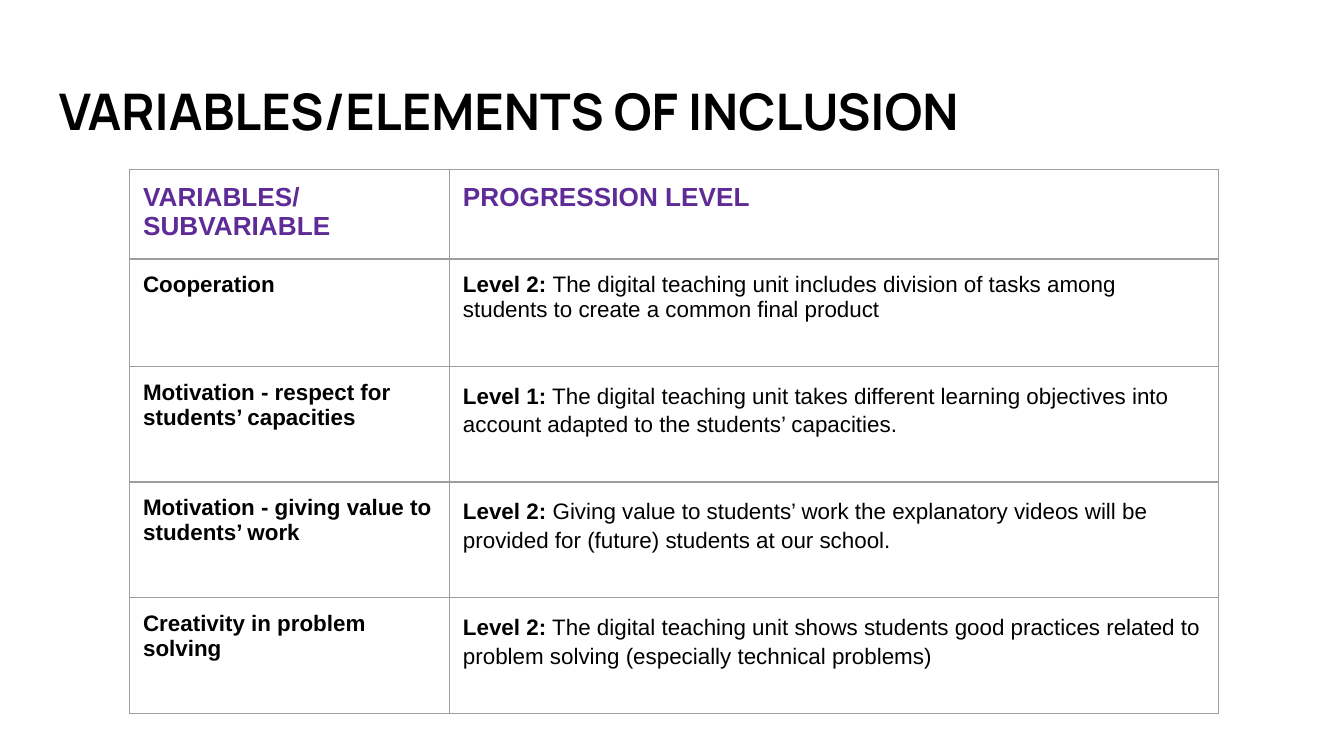
from lxml import etree
from pptx import Presentation
from pptx.dml.color import RGBColor
from pptx.enum.text import MSO_ANCHOR
from pptx.oxml.ns import qn
from pptx.util import Pt

PX = 4572
MID = MSO_ANCHOR.MIDDLE
TOP = MSO_ANCHOR.TOP
HUES = {"ink": "000000", "head": "5E2B97", "rule": "9E9E9E"}
PAD = 20
COLS = [476, 1144]
ROWS = [133, 160, 172, 172, 172]
HEADS = [["VARIABLES/", "SUBVARIABLE"], ["PROGRESSION LEVEL"]]
ITEMS = [
    ("Cooperation", "Level 2: ",
     "The digital teaching unit includes division of tasks among students to create a common final product", 1.0),
    ("Motivation - respect for students’ capacities", "Level 1:",
     " The digital teaching unit takes different learning objectives into account adapted to the students’ capacities.", 1.15),
    ("Motivation - giving value to students’ work", "Level 2:",
     " Giving value to students’ work the explanatory videos will be provided for (future) students at our school.", 1.15),
    ("Creativity in problem solving", "Level 2:",
     " The digital teaching unit shows students good practices related to problem solving (especially technical problems)", 1.15),
]


def add_run(para, text, size, hue="ink", bold=True, face="Arial"):
    """Add one styled run to a paragraph."""
    run = para.add_run()
    run.text = text
    font = run.font
    font.name, font.size, font.bold = face, Pt(size), bold
    font.color.rgb = RGBColor.from_string(HUES[hue])


def set_pad(part):
    """Give a cell or text frame equal margins."""
    part.margin_left = part.margin_right = PAD * PX
    part.margin_top = part.margin_bottom = PAD * PX


def set_edge(cell):
    """Draw a thin rule on all four sides of a cell."""
    props = cell._tc.get_or_add_tcPr()
    for side in ("a:lnL", "a:lnR", "a:lnT", "a:lnB"):
        line = etree.SubElement(props, qn(side), w=str(Pt(0.75)))
        fill = etree.SubElement(line, qn("a:solidFill"))
        etree.SubElement(fill, qn("a:srgbClr"), val=HUES["rule"])


def add_title(slide, x, y, w, h):
    """Place the slide title in its box."""
    box = slide.shapes.add_textbox(x * PX, y * PX, w * PX, h * PX)
    frame = box.text_frame
    frame.word_wrap = True
    frame.vertical_anchor = MID
    set_pad(frame)
    add_run(frame.paragraphs[0], "VARIABLES/ELEMENTS OF INCLUSION", 27, face="Manrope")


def add_grid(slide, x, y, w, h):
    """Place the table of variables and progression levels."""
    shape = slide.shapes.add_table(len(ROWS), len(COLS), x * PX, y * PX, w * PX, h * PX)
    table = shape.table
    table.first_row = table.horz_banding = False
    for col, wide in zip(table.columns, COLS):
        col.width = wide * PX * w // sum(COLS)
    for row, high in zip(table.rows, ROWS):
        row.height = high * PX * h // sum(ROWS)
    for cell in table.iter_cells():
        set_pad(cell)
        cell.vertical_anchor = TOP
        set_edge(cell)
        cell.fill.background()
    for col, lines in enumerate(HEADS):
        frame = table.cell(0, col).text_frame
        for i, text in enumerate(lines):
            para = frame.add_paragraph() if i else frame.paragraphs[0]
            add_run(para, text, 14, "head")
    for row, (name, level, text, gap) in enumerate(ITEMS, 1):
        add_run(table.cell(row, 0).text_frame.paragraphs[0], name, 12)
        para = table.cell(row, 1).text_frame.paragraphs[0]
        para.line_spacing = gap
        add_run(para, level, 12)
        add_run(para, text, 12, bold=False)


def main():
    """Build and save the slide."""
    deck = Presentation()
    deck.slide_width, deck.slide_height = 2000 * PX, 1125 * PX
    slide = deck.slides.add_slide(deck.slide_layouts[6])
    add_title(slide, 68, 96, 1864, 136)
    add_grid(slide, 193, 252, sum(COLS), sum(ROWS))
    deck.save("out.pptx")


if __name__ == "__main__":
    main()
